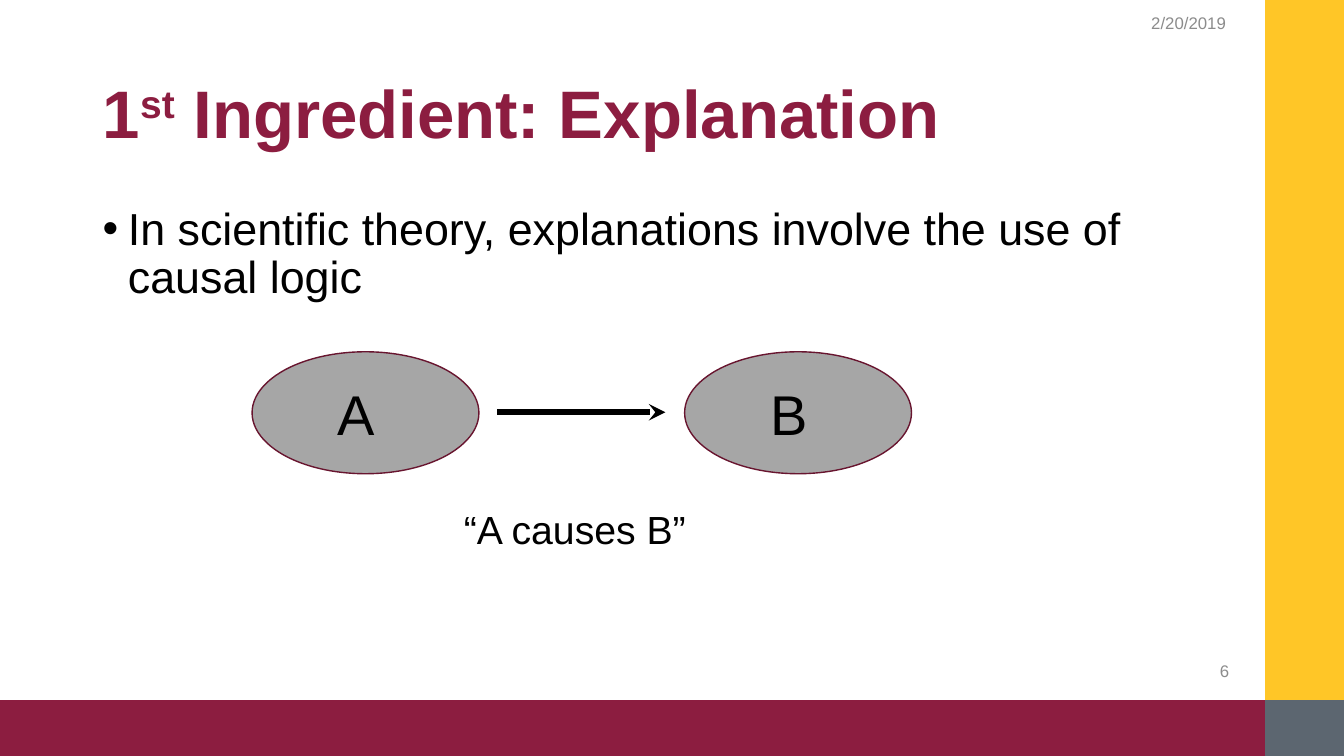
from lxml.etree import SubElement
from pptx import Presentation
from pptx.dml.color import RGBColor
from pptx.enum.shapes import MSO_CONNECTOR, MSO_SHAPE
from pptx.enum.text import MSO_ANCHOR, PP_ALIGN
from pptx.oxml.ns import qn
from pptx.util import Inches, Pt

FONT = "Arial"
MAROON = RGBColor(0x8C, 0x1D, 0x40)
GOLD = RGBColor(0xFF, 0xC6, 0x27)
SLATE = RGBColor(0x5C, 0x66, 0x70)
DARK_MAROON = RGBColor(0x68, 0x15, 0x2F)
GRAY = RGBColor(0xA6, 0xA6, 0xA6)
LIGHT_TEXT = RGBColor(0x8C, 0x8C, 0x8C)
BLACK = RGBColor(0, 0, 0)

WIDTH, HEIGHT = 13.33, 7.5
SIDE_LEFT, FOOTER_TOP = 12.55, 6.95
CONTENT_LEFT, CONTENT_WIDTH = 0.92, 11.38
OVAL_TOP, OVAL_WIDTH, OVAL_HEIGHT = 3.49, 2.25, 1.21


def inches(*lengths):
    return [Inches(length) for length in lengths]


def add_run(paragraph, text, size, color, bold=False):
    run = paragraph.add_run()
    run.text = text
    run.font.name = FONT
    run.font.size = Pt(size)
    run.font.bold = bold
    run.font.color.rgb = color
    return run


def add_panel(slide, shape_type, box, fill, line):
    shape = slide.shapes.add_shape(shape_type, *inches(*box))
    shape.shadow.inherit = False
    shape.fill.solid()
    shape.fill.fore_color.rgb = fill
    shape.line.color.rgb = line
    shape.line.width = Pt(1)
    return shape


def add_text(slide, box, text, size, color=BLACK, anchor=MSO_ANCHOR.TOP,
             align=PP_ALIGN.LEFT):
    text_frame = slide.shapes.add_textbox(*inches(*box)).text_frame
    text_frame.word_wrap = True
    text_frame.vertical_anchor = anchor
    paragraph = text_frame.paragraphs[0]
    paragraph.alignment = align
    add_run(paragraph, text, size, color)
    return text_frame


def format_title(slide):
    title = slide.shapes.title
    title.left, title.top, title.width, title.height = inches(
        CONTENT_LEFT, 0.47, CONTENT_WIDTH, 1.38)
    title.text_frame.vertical_anchor = MSO_ANCHOR.MIDDLE
    paragraph = title.text_frame.paragraphs[0]
    paragraph.alignment = PP_ALIGN.LEFT
    paragraph.line_spacing = 0.9
    add_run(paragraph, "1", 48, MAROON, bold=True)
    ordinal = add_run(paragraph, "st", 48, MAROON, bold=True)
    ordinal._r.get_or_add_rPr().set("baseline", "30000")
    add_run(paragraph, " Ingredient: Explanation", 48, MAROON, bold=True)


def add_bullet_text(slide, box, text):
    paragraph = add_text(slide, box, text, 32).paragraphs[0]
    paragraph.line_spacing = 0.9
    properties = paragraph._p.get_or_add_pPr()
    properties.set("marL", str(Inches(0.25)))
    properties.set("indent", str(Inches(-0.25)))
    SubElement(properties, qn("a:buFont"), typeface=FONT)
    SubElement(properties, qn("a:buChar"), char="•")


def add_oval(slide, left, label):
    oval = add_panel(slide, MSO_SHAPE.OVAL,
                     (left, OVAL_TOP, OVAL_WIDTH, OVAL_HEIGHT),
                     GRAY, DARK_MAROON)
    text_frame = oval.text_frame
    text_frame.margin_left = Inches(0.52)
    text_frame.vertical_anchor = MSO_ANCHOR.MIDDLE
    paragraph = text_frame.paragraphs[0]
    paragraph.alignment = PP_ALIGN.LEFT
    add_run(paragraph, label, 40, BLACK)


def add_arrow(slide, start, end, y):
    arrow = slide.shapes.add_connector(
        MSO_CONNECTOR.STRAIGHT, *inches(start, y, end, y))
    arrow.line.color.rgb = BLACK
    arrow.line.width = Pt(4)
    SubElement(arrow.line._get_or_add_ln(), qn("a:tailEnd"), type="stealth")
    SubElement(arrow._element.spPr, qn("a:effectLst"))


def main():
    presentation = Presentation()
    presentation.slide_width, presentation.slide_height = inches(WIDTH, HEIGHT)
    slide = presentation.slides.add_slide(presentation.slide_layouts[5])

    side_width, footer_height = WIDTH - SIDE_LEFT, HEIGHT - FOOTER_TOP
    for box, color in (
        ((0, FOOTER_TOP, SIDE_LEFT, footer_height), MAROON),
        ((SIDE_LEFT, 0, side_width, FOOTER_TOP), GOLD),
        ((SIDE_LEFT, FOOTER_TOP, side_width, footer_height), SLATE),
    ):
        add_panel(slide, MSO_SHAPE.RECTANGLE, box, color, color)

    format_title(slide)
    add_bullet_text(
        slide, (CONTENT_LEFT, 2, CONTENT_WIDTH, 3.79),
        "In scientific theory, explanations involve the use of causal logic")
    add_text(slide, (11.32, 0.03, 0.97, 0.4), "2/20/2019", 12, LIGHT_TEXT,
             MSO_ANCHOR.MIDDLE)
    add_text(slide, (11.87, 6.46, 0.42, 0.4), "6", 12, LIGHT_TEXT,
             MSO_ANCHOR.MIDDLE, PP_ALIGN.RIGHT)

    add_arrow(slide, 4.93, 6.6, 4.09)
    add_oval(slide, 2.5, "A")
    add_oval(slide, 6.79, "B")
    caption = add_text(slide, (3.85, 4.96, 3.58, 0.57), "“A causes B”", 28)
    caption.margin_left = Inches(0.75)

    presentation.save("out.pptx")


if __name__ == "__main__":
    main()
